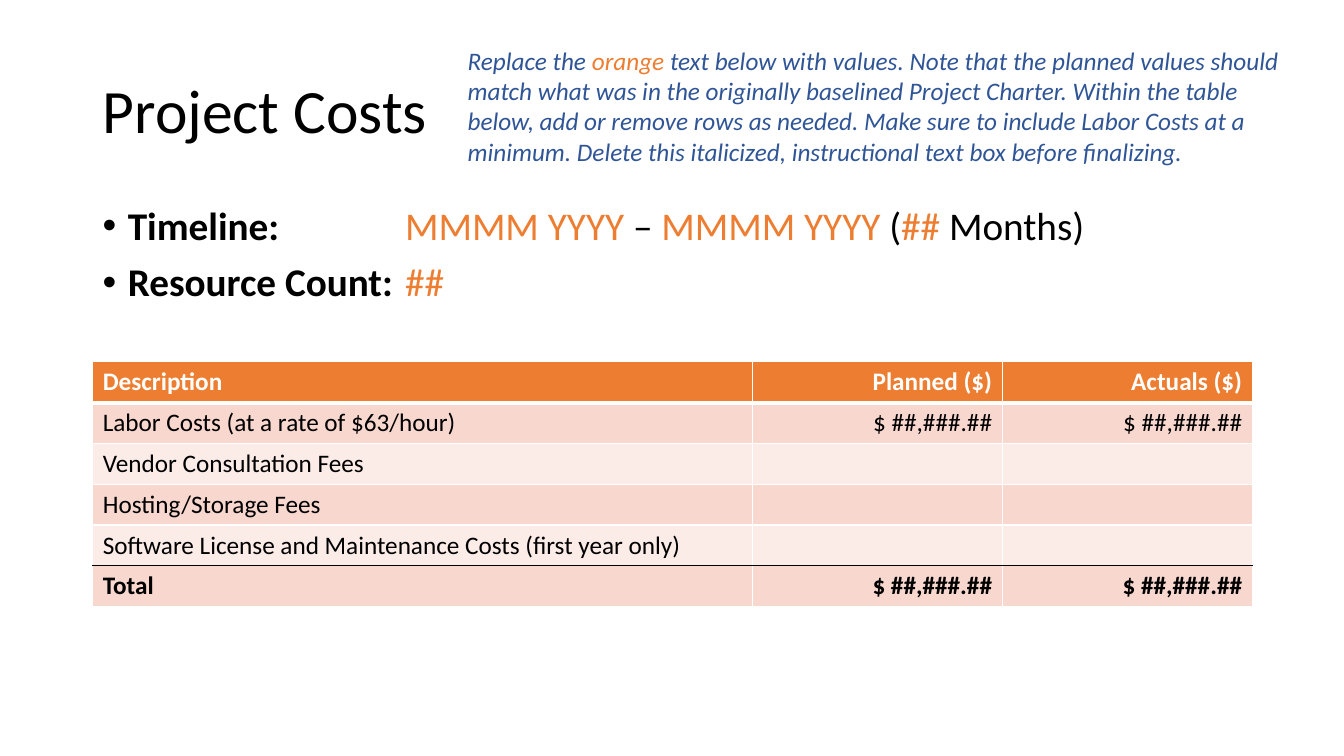
import pptx
import pptx.util
import pptx.dml.color
import pptx.enum.text
import pptx.oxml
import pptx.oxml.ns

Inches = pptx.util.Inches
Pt = pptx.util.Pt
ALIGN = pptx.enum.text.PP_ALIGN
ANCHOR = pptx.enum.text.MSO_ANCHOR
FIT = pptx.enum.text.MSO_AUTO_SIZE

BLACK, WHITE, ORANGE, BLUE = "000000", "FFFFFF", "ED7D31", "2F5597"
BANDS = ("F8D7CE", "FCECE8")


def color(code):
    return pptx.dml.color.RGBColor.from_string(code)


def node(xml):
    space = pptx.oxml.ns.nsdecls("a")
    return pptx.oxml.parse_xml(xml.replace(">", f" {space}>", 1))


def style(run, size, code, bold=False, italic=False):
    font = run.font
    font.name, font.size = "Calibri", Pt(size)
    font.bold, font.italic = bold, italic
    font.color.rgb = color(code)


def add_runs(para, size, parts, italic=False):
    for text, code, bold in parts:
        run = para.add_run()
        run.text = text
        style(run, size, code, bold, italic)


def add_box(slide, box):
    frame = slide.shapes.add_textbox(*map(Inches, box)).text_frame
    frame.word_wrap = True
    return frame


def add_title(slide, box):
    title = slide.shapes.title
    title.left, title.top, title.width, title.height = map(Inches, box)
    frame = title.text_frame
    frame.text = "Project Costs"
    frame.auto_size = FIT.NONE
    frame.vertical_anchor = ANCHOR.MIDDLE
    para = frame.paragraphs[0]
    para.alignment, para.line_spacing = ALIGN.LEFT, 0.9
    style(para.runs[0], 44, BLACK)


def add_facts(slide, box):
    frame = add_box(slide, box)
    facts = (
        [("Timeline:\t", BLACK, True), ("MMMM YYYY ", ORANGE, False),
         ("– ", BLACK, False), ("MMMM YYYY ", ORANGE, False),
         ("(", BLACK, False), ("##", ORANGE, False),
         (" Months)", BLACK, False)],
        [("Resource Count:\t", BLACK, True), ("##", ORANGE, False)],
    )
    for i, parts in enumerate(facts):
        para = frame.add_paragraph() if i else frame.paragraphs[0]
        # Hanging bullet, with the values lined up on one tab stop
        props = para._p.get_or_add_pPr()
        props.set("marL", str(Inches(0.25)))
        props.set("indent", str(-Inches(0.25)))
        props.append(node('<a:buFont typeface="Arial"></a:buFont>'))
        props.append(node('<a:buChar char="•"></a:buChar>'))
        props.append(node(
            f'<a:tabLst><a:tab pos="{Inches(3)}" algn="l"/></a:tabLst>'))
        para.line_spacing = 0.9
        para.space_before = Pt(10 if i else 0)
        add_runs(para, 28, parts)


def add_edges(cell, top, low):
    props = cell._tc.get_or_add_tcPr()
    edges = (("L", WHITE, 1), ("R", WHITE, 1), ("T", *top), ("B", *low))
    for i, (side, code, width) in enumerate(edges):
        props.insert(i, node(
            f'<a:ln{side} w="{Pt(width)}"><a:solidFill>'
            f'<a:srgbClr val="{code}"/></a:solidFill></a:ln{side}>'))


def add_costs(slide, box):
    money = "$ ##,###.##"
    rows = (
        ("Description", "Planned ($)", "Actuals ($)"),
        ("Labor Costs (at a rate of $63/hour)", money, money),
        ("Vendor Consultation Fees", "", ""),
        ("Hosting/Storage Fees", "", ""),
        ("Software License and Maintenance Costs (first year only)", "", ""),
        ("Total", money, money),
    )
    last = len(rows) - 1
    # Rules between rows, from the top edge to the bottom one
    rules = [(WHITE, 1)] * (last + 2)
    rules[1], rules[last] = (WHITE, 3), (BLACK, 1)
    table = slide.shapes.add_table(
        len(rows), 3, *map(Inches, box)).table
    for col, width in zip(table.columns, (6.54, 2.48, 2.48)):
        col.width = Inches(width)
    for r, row in enumerate(rows):
        table.rows[r].height = Inches(box[3] / len(rows))
        for c, text in enumerate(row):
            cell = table.cell(r, c)
            cell.fill.solid()
            cell.fill.fore_color.rgb = color(BANDS[(r - 1) % 2] if r else ORANGE)
            add_edges(cell, rules[r], rules[r + 1])
            cell.text = text
            para = cell.text_frame.paragraphs[0]
            para.alignment = ALIGN.RIGHT if c else ALIGN.LEFT
            for run in para.runs:
                style(run, 18, BLACK if r else WHITE, r in (0, last))


def add_note(slide, box):
    frame = add_box(slide, box)
    add_runs(frame.paragraphs[0], 18, [
        ("Replace the ", BLUE, False),
        ("orange", ORANGE, False),
        (" text below with values. Note that the planned values should match "
         "what was in the originally baselined Project Charter. Within the "
         "table below, add or remove rows as needed. Make sure to include "
         "Labor Costs at a minimum. Delete this italicized, instructional "
         "text box before finalizing.", BLUE, False),
    ], italic=True)
    frame.auto_size = FIT.SHAPE_TO_FIT_TEXT


def main():
    deck = pptx.Presentation()
    deck.slide_width, deck.slide_height = Inches(13.33), Inches(7.5)
    slide = deck.slides.add_slide(deck.slide_layouts[5])
    left, width = 0.92, 11.5
    add_title(slide, (left, 0.4, width, 1.45))
    add_facts(slide, (left, 2, width, 1.6))
    add_costs(slide, (left, 3.59, width, 2.43))
    add_note(slide, (4.54, 0.4, 8.35, 1.31))
    deck.save("out.pptx")


if __name__ == "__main__":
    main()
